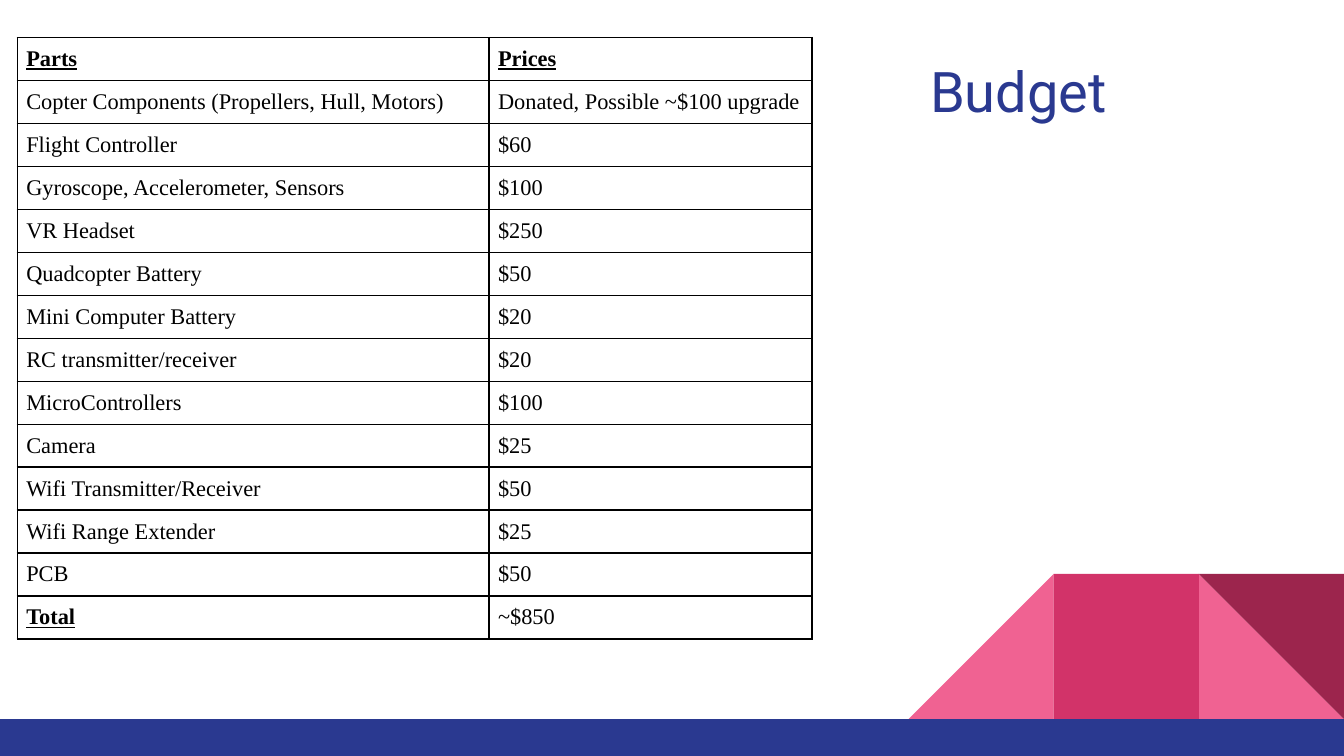
from dataclasses import dataclass

from lxml.etree import SubElement
from pptx import Presentation
from pptx.dml.color import RGBColor
from pptx.enum.shapes import MSO_SHAPE
from pptx.enum.text import MSO_ANCHOR, PP_ALIGN
from pptx.oxml.ns import qn
from pptx.util import Inches, Pt


@dataclass(frozen=True)
class Theme:
    navy: str = "2A3990"
    pink: str = "F06292"
    rose: str = "D23369"
    wine: str = "9C254D"
    black: str = "000000"
    title_font: str = "Roboto"
    table_font: str = "Times New Roman"
    title_size: int = 30
    table_size: int = 12


THEME = Theme()

BUDGET = [
    ("Parts", "Prices"),
    ("Copter Components (Propellers, Hull, Motors)", "Donated, Possible ~$100 upgrade"),
    ("Flight Controller", "$60"),
    ("Gyroscope, Accelerometer, Sensors", "$100"),
    ("VR Headset", "$250"),
    ("Quadcopter Battery", "$50"),
    ("Mini Computer Battery", "$20"),
    ("RC transmitter/receiver", "$20"),
    ("MicroControllers", "$100"),
    ("Camera", "$25"),
    ("Wifi Transmitter/Receiver", "$50"),
    ("Wifi Range Extender", "$25"),
    ("PCB", "$50"),
    ("Total", "~$850"),
]


def style_run(run, font, size, color, strong=False):
    run.font.name = font
    run.font.size = Pt(size)
    run.font.color.rgb = RGBColor.from_string(color)
    run.font.bold = run.font.underline = strong


def add_block(slide, preset, left, top, width, height, color, rotation=0):
    block = slide.shapes.add_shape(preset, left, top, width, height)
    block.fill.solid()
    block.fill.fore_color.rgb = RGBColor.from_string(color)
    block.line.fill.background()
    block.shadow.inherit = False
    block.rotation = rotation


def add_decoration(slide, left, top, side):
    """Three square tiles in a row; the last holds two triangles."""
    tiles = [
        (2, MSO_SHAPE.RIGHT_TRIANGLE, THEME.pink, 0),
        (0, MSO_SHAPE.RIGHT_TRIANGLE, THEME.pink, 270),
        (1, MSO_SHAPE.RECTANGLE, THEME.rose, 0),
        (2, MSO_SHAPE.RIGHT_TRIANGLE, THEME.wine, 180),
    ]
    for column, preset, color, rotation in tiles:
        add_block(slide, preset, left + column * side, top, side, side, color, rotation)


def add_title(slide, left, top, width, height):
    title = slide.shapes.title
    title.left, title.top, title.width, title.height = left, top, width, height
    frame = title.text_frame
    frame.text = "Budget"
    frame.vertical_anchor = MSO_ANCHOR.MIDDLE
    frame.margin_left = frame.margin_right = Inches(0.1)
    frame.margin_top = frame.margin_bottom = Inches(0.1)
    heading = frame.paragraphs[0]
    heading.alignment = PP_ALIGN.LEFT
    style_run(heading.runs[0], THEME.title_font, THEME.title_size, THEME.navy)


def add_borders(cell):
    properties = cell._tc.get_or_add_tcPr()
    for side in ("lnL", "lnR", "lnT", "lnB"):
        line = SubElement(properties, qn(f"a:{side}"), w=str(Pt(1)))
        fill = SubElement(line, qn("a:solidFill"))
        SubElement(fill, qn("a:srgbClr"), val=THEME.black)


def add_budget_table(slide, left, top, column_widths, row_height):
    table = slide.shapes.add_table(
        len(BUDGET), len(column_widths), left, top,
        sum(column_widths), row_height * len(BUDGET),
    ).table
    table.first_row = table.horz_banding = False
    for column, width in zip(table.columns, column_widths):
        column.width = width
    for row, entries in zip(table.rows, BUDGET):
        row.height = row_height
        for cell, entry in zip(row.cells, entries):
            add_borders(cell)
            cell.fill.background()
            cell.margin_left = cell.margin_right = Pt(4.75)
            cell.margin_top = cell.margin_bottom = Pt(4.75)
            cell.text_frame.text = entry
            paragraph = cell.text_frame.paragraphs[0]
            paragraph.alignment = PP_ALIGN.JUSTIFY
            style_run(paragraph.runs[0], THEME.table_font, THEME.table_size,
                      THEME.black, strong=entry in ("Parts", "Prices", "Total"))


def main():
    deck = Presentation()
    deck.slide_width = Inches(10)
    deck.slide_height = deck.slide_width * 9 // 16
    slide = deck.slides.add_slide(deck.slide_layouts[5])

    # Decoration above the bottom band
    band_top = Inches(5.35)
    tile = Inches(1.08)
    add_decoration(slide, deck.slide_width - 3 * tile, band_top - tile, tile)
    add_block(slide, MSO_SHAPE.RECTANGLE, 0, band_top,
              deck.slide_width, deck.slide_height - band_top, THEME.navy)

    # Content
    add_title(slide, Inches(6.82), Inches(0.34), Inches(2.03), Inches(0.66))
    add_budget_table(slide, Inches(0.13), Inches(0.28),
                     [Inches(3.51), Inches(2.4)], Inches(0.32))

    deck.save("out.pptx")


if __name__ == "__main__":
    main()
